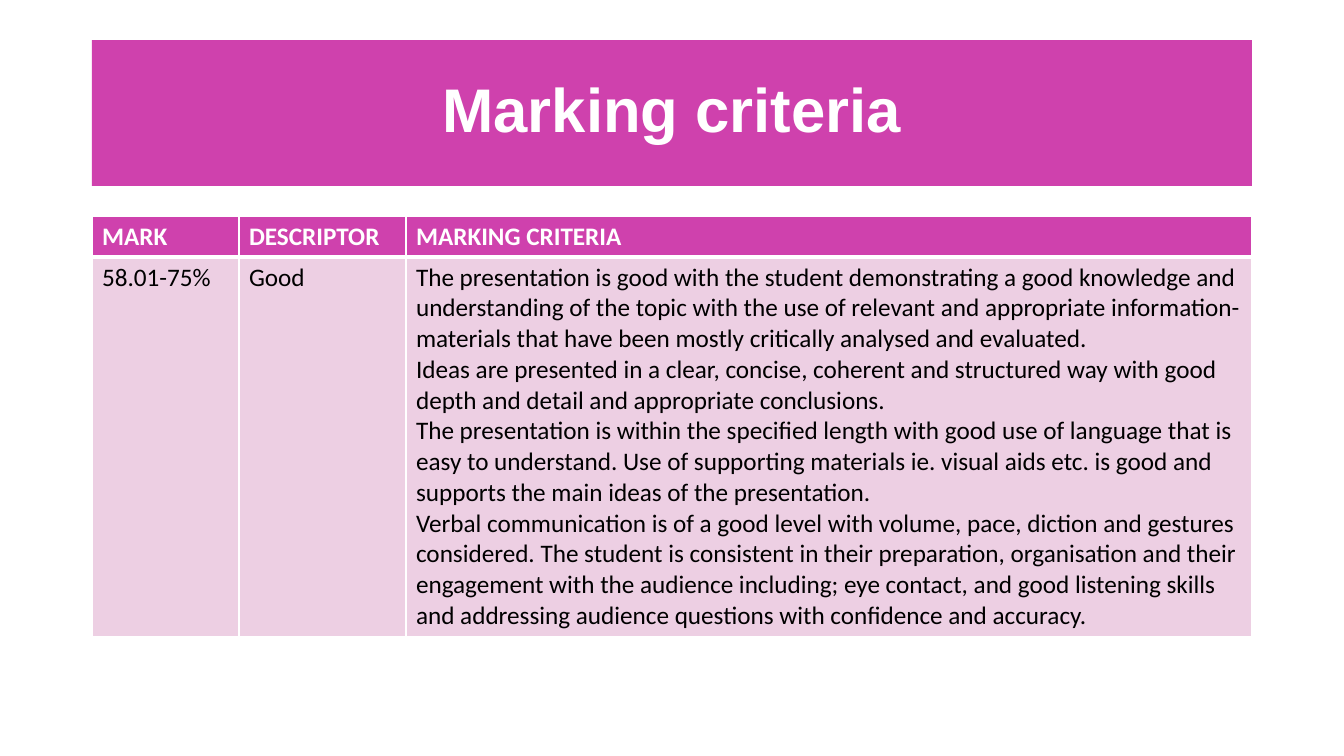
from lxml.etree import SubElement
from pptx import Presentation
from pptx.dml.color import RGBColor
from pptx.enum.text import MSO_ANCHOR, PP_ALIGN
from pptx.oxml.ns import qn
from pptx.util import Pt

PX = 12192000 / 1344
MAGENTA, PINK, WHITE, BLACK = "CF41AD", "EDCFE3", "FFFFFF", "000000"

COLUMNS = [147, 167, 846]
ROWS = [41, 378]
CRITERIA = [
    ["MARK", "DESCRIPTOR", "MARKING CRITERIA"],
    ["58.01-75%", "Good", "\n".join([
        "The presentation is good with the student demonstrating a good knowledge and "
        "understanding of the topic with the use of relevant and appropriate "
        "information-materials that have been mostly critically analysed and evaluated.",
        "Ideas are presented in a clear, concise, coherent and structured way with good "
        "depth and detail and appropriate conclusions.",
        "The presentation is within the specified length with good use of language that "
        "is easy to understand. Use of supporting materials ie. visual aids etc. is good "
        "and supports the main ideas of the presentation.",
        "Verbal communication is of a good level with volume, pace, diction and gestures "
        "considered. The student is consistent in their preparation, organisation and "
        "their engagement with the audience including; eye contact, and good listening "
        "skills and addressing audience questions with confidence and accuracy.",
    ])],
]


def px(n):
    return round(n * PX)


def set_fill(fill, color):
    fill.solid()
    fill.fore_color.rgb = RGBColor.from_string(color)


def set_font(p, name, size, color, bold):
    p.font.name = name
    p.font.size = Pt(size)
    p.font.bold = bold
    p.font.color.rgb = RGBColor.from_string(color)


def add_borders(cell, top, bottom):
    """White cell borders, with top and bottom widths in points; call before filling."""
    tcPr = cell._tc.get_or_add_tcPr()
    for tag, width in (("lnL", 1), ("lnR", 1), ("lnT", top), ("lnB", bottom)):
        ln = SubElement(tcPr, qn(f"a:{tag}"), w=str(Pt(width)))
        SubElement(SubElement(ln, qn("a:solidFill")), qn("a:srgbClr"), val=WHITE)


def place_title(s, x, y, w, h):
    title = s.shapes.title
    title.left, title.top, title.width, title.height = map(px, (x, y, w, h))
    set_fill(title.fill, MAGENTA)
    tf = title.text_frame
    tf.text = "Marking criteria"
    tf.vertical_anchor = MSO_ANCHOR.MIDDLE
    p = tf.paragraphs[0]
    p.alignment = PP_ALIGN.CENTER
    p.line_spacing = 0.9
    set_font(p, "Arial", 44, WHITE, True)


def add_criteria_table(s, x, y, w, h):
    table = s.shapes.add_table(len(ROWS), len(COLUMNS), *map(px, (x, y, w, h))).table
    for column, width in zip(table.columns, COLUMNS):
        column.width = px(width)
    for i, (row, height) in enumerate(zip(table.rows, ROWS)):
        row.height = px(height)
        header = i == 0
        for cell, text in zip(row.cells, CRITERIA[i]):
            cell.text = text
            add_borders(cell, *((1, 3) if header else (3, 1)))
            set_fill(cell.fill, MAGENTA if header else PINK)
            for p in cell.text_frame.paragraphs:
                set_font(p, "Calibri", 18, WHITE if header else BLACK, header)


def main():
    prs = Presentation()
    prs.slide_width, prs.slide_height = px(1344), px(756)
    s = prs.slides.add_slide(prs.slide_layouts[5])
    set_fill(s.background.fill, WHITE)
    place_title(s, 92, 40, sum(COLUMNS), 146)
    add_criteria_table(s, 92, 216, sum(COLUMNS), sum(ROWS))
    prs.save("out.pptx")


if __name__ == "__main__":
    main()
